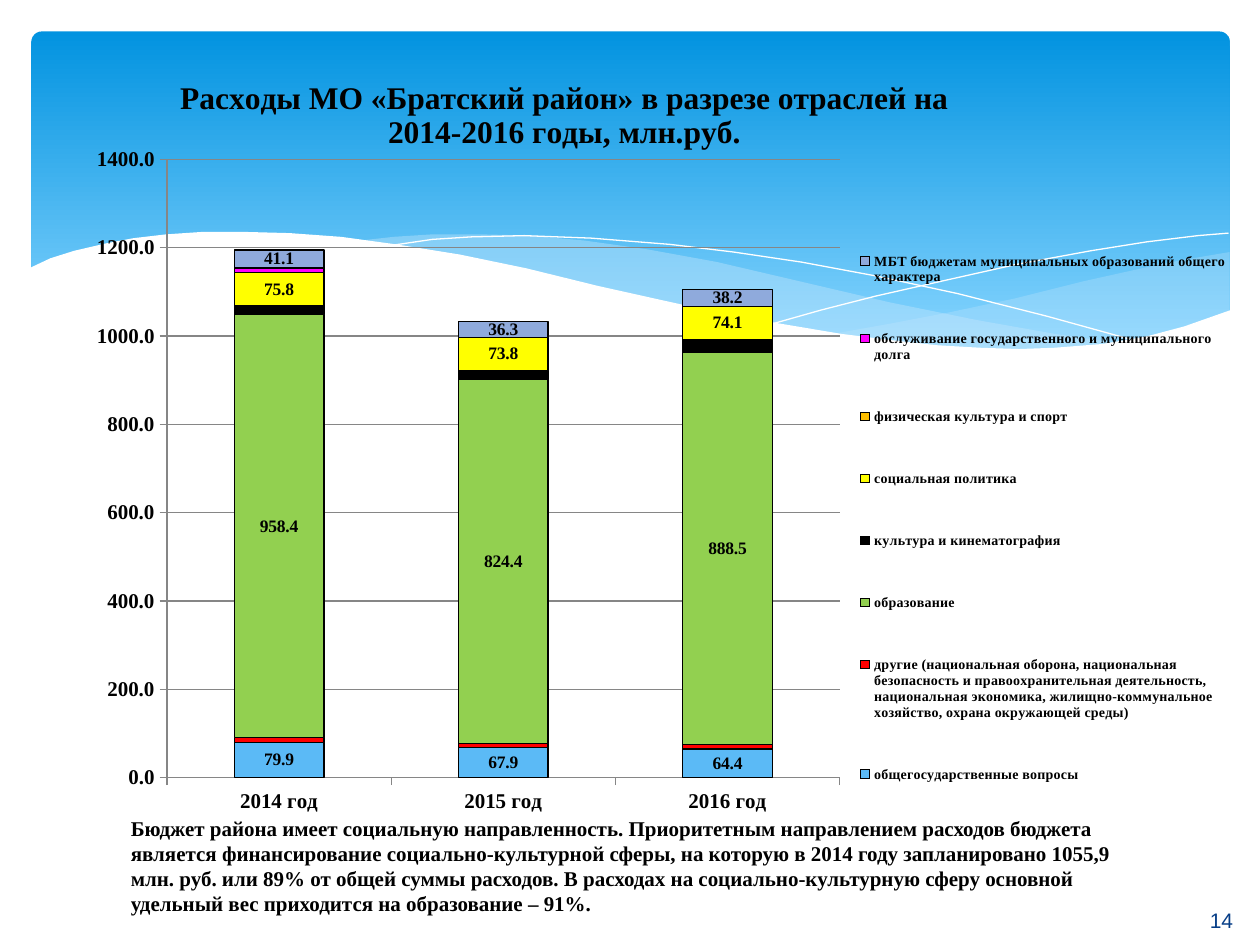
from dataclasses import dataclass

from lxml import etree
from pptx import Presentation
from pptx import util as u
from pptx.chart import data as cd
from pptx.dml.color import RGBColor
from pptx.enum import chart as ec, shapes, text
from pptx.oxml import ns


@dataclass(frozen=True)
class Theme:
    """Colours, fonts and type sizes."""
    top: str = "0293E0"
    low: str = "83D3FE"
    mist: str = "C6E7FC"
    white: str = "FFFFFF"
    black: str = "000000"
    grid: str = "868686"
    navy: str = "073E87"
    serif: str = "Times New Roman"
    sans: str = "Arial"
    head: int = 18
    body: int = 12
    label: int = 10
    key: int = 8


def inch(*vals):
    return [u.Inches(v) for v in vals]


class Deck:
    """Style and current slide, with a method for each kind of element."""

    def __init__(self, theme):
        self.t = theme
        self.prs = Presentation()
        self.prs.slide_width, self.prs.slide_height = inch(10, 7.5)
        self.slide = self.prs.slides.add_slide(self.prs.slide_layouts[6])

    def font(self, font, size, color=None, face=None, bold=True):
        font.name, font.size, font.bold = face or self.t.serif, u.Pt(size), bold
        font.color.rgb = RGBColor.from_string(color or self.t.black)

    def paint(self, fill, color):
        fill.solid()
        fill.fore_color.rgb = RGBColor.from_string(color)

    def band(self, *box):
        shape = self.slide.shapes.add_shape(shapes.MSO_SHAPE.ROUNDED_RECTANGLE, *inch(*box))
        shape.adjustments[0] = 0.03
        shape.shadow.inherit = False
        shape.line.fill.background()
        shape.fill.gradient()
        shape.fill.gradient_angle = 270
        stops = shape.fill.gradient_stops
        for stop, color, pos in zip(stops, (self.t.top, self.t.low), (0, 0.9)):
            stop.color.rgb, stop.position = RGBColor.from_string(color), pos

    def wave(self, pts, color=None, alpha=100):
        pts = [inch(*p) for p in pts]
        path = self.slide.shapes.build_freeform(*pts[0])
        path.add_line_segments(pts[1:], close=color is not None)
        shape = path.convert_to_shape()
        shape.shadow.inherit = False
        if color is None:
            shape.fill.background()
            self.paint(shape.line.fill, self.t.white)
            shape.line.width = u.Pt(0)
            return
        shape.line.fill.background()
        self.paint(shape.fill, color)
        if alpha < 100:
            rgb = shape.fill._xPr.find(".//" + ns.qn("a:srgbClr"))
            etree.SubElement(rgb, ns.qn("a:alpha"), val=str(alpha * 1000))

    def text(self, box, words, align=text.PP_ALIGN.LEFT, **style):
        frame = self.slide.shapes.add_textbox(*inch(*box)).text_frame
        frame.word_wrap = True
        frame.vertical_anchor = text.MSO_ANCHOR.MIDDLE
        frame.text = words
        para = frame.paragraphs[0]
        para.alignment = align
        self.font(para.runs[0].font, self.t.body, **style)

    def place(self, part, inner=False, **sides):
        """Give a chart part a manual layout in fractions of the chart."""
        for old in part.findall(ns.qn("c:layout")):
            part.remove(old)
        layout = etree.Element(ns.qn("c:layout"))
        manual = etree.SubElement(layout, ns.qn("c:manualLayout"))
        if inner:
            etree.SubElement(manual, ns.qn("c:layoutTarget"), val="inner")
        for side in "xy":
            etree.SubElement(manual, ns.qn(f"c:{side}Mode"), val="edge")
        for side, val in sides.items():
            etree.SubElement(manual, ns.qn(f"c:{side}"), val=str(val))
        first = part.find(ns.qn("c:tx"))
        if first is None:
            first = part.find(ns.qn("c:legendPos"))
        part.insert(0 if first is None else part.index(first) + 1, layout)

    def axis(self, axis):
        self.font(axis.tick_labels.font, self.t.body)
        axis.major_tick_mark = ec.XL_TICK_MARK.OUTSIDE
        self.paint(axis.format.line.fill, self.t.grid)

    def chart(self, box, title, cats, rows):
        data = cd.CategoryChartData(number_format="0.0")
        data.categories = cats
        for name, vals, *_ in rows:
            data.add_series(name, vals)
        kind = ec.XL_CHART_TYPE.COLUMN_STACKED
        chart = self.slide.shapes.add_chart(kind, *inch(*box), data).chart
        self.font(chart.font, self.t.label)

        frame = chart.chart_title.text_frame
        frame.text = title
        for para in frame.paragraphs:
            self.font(para.runs[0].font, self.t.head)
        chart.chart_title.include_in_layout = False
        self.place(chart.chart_title._element, x=0.1, y=0.03)

        chart.has_legend = True
        chart.legend.position = ec.XL_LEGEND_POSITION.RIGHT
        chart.legend.include_in_layout = False
        self.font(chart.legend.font, self.t.key)
        self.place(chart.legend._element, x=0.68, y=0.18, w=0.32, h=0.71)
        area = chart._chartSpace.chart.plotArea
        self.place(area, inner=True, x=0.092, y=0.126, w=0.574, h=0.706)

        for axis in (chart.category_axis, chart.value_axis):
            self.axis(axis)
        value = chart.value_axis
        value.minimum_scale, value.maximum_scale, value.major_unit = 0, 1400, 200
        value.tick_labels.number_format = "0.0"
        value.tick_labels.number_format_is_linked = False
        self.paint(value.major_gridlines.format.line.fill, self.t.grid)

        plot = chart.plots[0]
        plot.gap_width, plot.overlap, plot.vary_by_categories = 150, 100, False
        for series, (_, _, color, shown) in zip(plot.series, rows):
            self.paint(series.format.fill, color)
            self.paint(series.format.line.fill, self.t.black)
            series.format.line.width = u.Pt(0.75)
            if shown:
                tags = series.data_labels
                tags.show_value = True
                tags.number_format, tags.number_format_is_linked = "0.0", False
                self.font(tags.font, self.t.label)


CREST = [(6.61, 2.65), (7.06, 2.57), (7.53, 2.48), (8.05, 2.37), (8.61, 2.23),
         (9.06, 2.13), (9.35, 2.07), (9.76, 2), (9.76, 2.47), (9.49, 2.57),
         (9.21, 2.65), (8.89, 2.72), (8.54, 2.76), (8.14, 2.78), (7.69, 2.77),
         (7.32, 2.74), (6.91, 2.69)]
SWELL = [(2.86, 1.91), (3.13, 1.88), (3.44, 1.86), (3.8, 1.86), (4.2, 1.87),
         (4.64, 1.91), (5.14, 1.98), (5.69, 2.08), (6.29, 2.22), (7.06, 2.4),
         (7.75, 2.54), (8.37, 2.65), (8.93, 2.73), (8.57, 2.77), (8.18, 2.79),
         (7.73, 2.78), (7.22, 2.74), (6.65, 2.66), (6.01, 2.55), (5.3, 2.4),
         (4.49, 2.22), (4.04, 2.11), (3.62, 2.03), (3.23, 1.96)]
FALL = [(3.09, 1.95), (3.43, 1.9), (3.74, 1.88), (4.16, 1.87), (4.69, 1.89),
        (5.32, 1.94), (5.82, 2), (6.36, 2.08), (6.95, 2.19), (7.6, 2.33),
        (8.31, 2.51), (9.07, 2.72)]
RISE = [(6.13, 2.57), (6.52, 2.46), (6.95, 2.35), (7.48, 2.23), (8.06, 2.1),
        (8.66, 1.99), (9.1, 1.92), (9.51, 1.87), (9.75, 1.85)]
SHORE = [(0.23, 3.29), (0.23, 2.13), (0.4, 2.05), (0.59, 1.99), (0.85, 1.93),
         (1.06, 1.89), (1.32, 1.86), (1.61, 1.84), (1.93, 1.84), (2.3, 1.85),
         (2.71, 1.88), (3.15, 1.94), (3.65, 2.02), (4.18, 2.13), (4.75, 2.27),
         (5.29, 2.39), (5.79, 2.5), (6.26, 2.58), (6.68, 2.65), (7.08, 2.7),
         (7.44, 2.74), (7.78, 2.76), (8.09, 2.77), (8.37, 2.76), (8.75, 2.73),
         (9.1, 2.67), (9.4, 2.59), (9.77, 2.46), (9.77, 3.29)]
COSTS = [
    ("общегосударственные вопросы", (79.9, 67.9, 64.4), "5BBAF6", True),
    ("другие (национальная оборона, национальная безопасность и правоохранительная "
     "деятельность, национальная экономика, жилищно-коммунальное хозяйство, охрана "
     "окружающей среды)", (10, 10, 10), "FF0000", False),
    ("образование", (958.4, 824.4, 888.5), "92D050", True),
    ("культура и кинематография", (20, 20, 30), "000000", False),
    ("социальная политика", (75.8, 73.8, 74.1), "FFFF00", True),
    ("физическая культура и спорт", (0, None, None), "FFC000", False),
    ("обслуживание государственного и муниципального долга", (10, 0, 0), "FF00FF", False),
    ("МБТ бюджетам муниципальных образований общего характера",
     (41.1, 36.3, 38.2), "8FAADC", True),
]
NOTE = ("Бюджет района имеет социальную направленность. Приоритетным направлением "
        "расходов бюджета является финансирование социально-культурной сферы, на которую "
        "в 2014 году запланировано 1055,9 млн. руб. или 89% от общей суммы расходов. "
        "В расходах на социально-культурную сферу основной удельный вес приходится "
        "на образование – 91%.")


def main():
    t = Theme()
    deck = Deck(t)
    deck.band(0.25, 0.25, 9.51, 2.7)
    deck.wave(CREST, t.mist, 29)
    deck.wave(SWELL, t.mist, 40)
    deck.wave(FALL)
    deck.wave(RISE)
    deck.wave(SHORE, t.white)
    deck.text((9.06, 7.1, 1.27, 0.4), "14", text.PP_ALIGN.CENTER,
              color=t.navy, face=t.sans, bold=False)
    deck.chart((0.47, 0.39, 9.3, 6.95),
               "Расходы МО «Братский район» в разрезе отраслей на\n2014-2016 годы, млн.руб.",
               [f"{year} год" for year in range(2014, 2017)], COSTS)
    deck.text((0.94, 6.48, 8.06, 0.78), NOTE)
    deck.prs.save("out.pptx")


if __name__ == "__main__":
    main()
